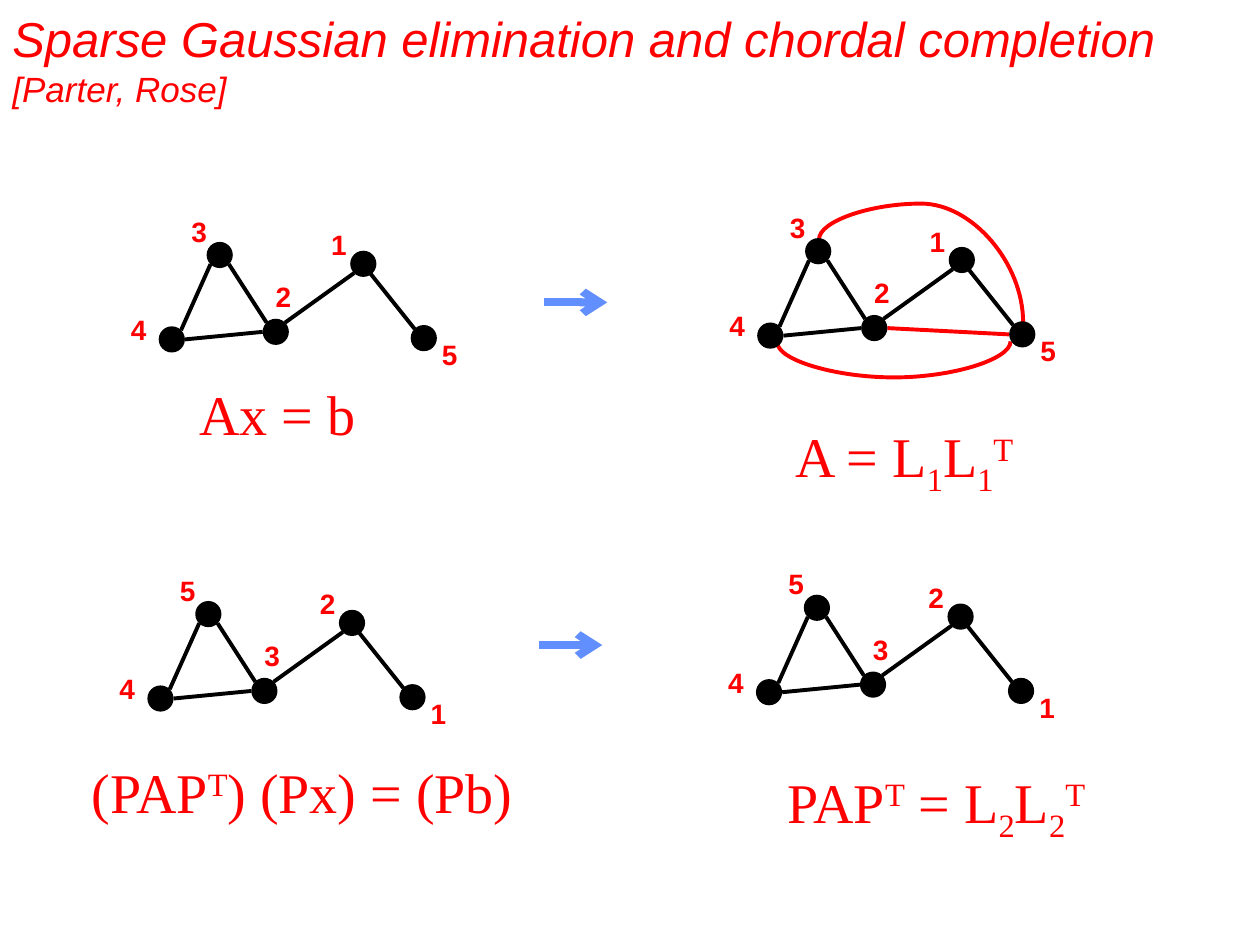
from lxml import etree
from pptx import Presentation
from pptx import util as u
from pptx.dml.color import RGBColor
from pptx.enum import shapes, text
from pptx.oxml.ns import qn

COLORS = {"red": "FF0000", "black": "000000", "blue": "618FFD"}
COLUMNS, ROWS = 100, 75
CELL = u.Inches(10) // COLUMNS
NODE = 2.08
SUB, SUP = {"base": -25}, {"base": 30}

NODES = {"left": (3.2, 9.4), "mid": (11.45, 8.8), "top": (7, 2.7),
         "peak": (18.4, 3.4), "right": (23.2, 9.3)}
LABELS = {"left": (0, 7.8), "mid": (11.5, 5.2), "top": (4.8, 0),
          "peak": (15.9, 1.1), "right": (24.7, 9.8)}
SITES = {"nw": (0.15, 0.15), "ne": (0.85, 0.15), "sw": (0.15, 0.85),
         "se": (0.85, 0.85), "w": (0, 0.5), "e": (1, 0.5), "inner": (0.57, 0.62)}
EDGES = [("peak", "inner", "right", "nw"), ("top", "se", "mid", "nw"),
         ("top", "sw", "left", "ne"), ("left", "e", "mid", "w"),
         ("mid", "ne", "peak", "sw")]
FILL_EDGE = ("mid", "e", "right", "w")


def cells(*values):
    return [round(v * CELL) for v in values]


def rgb(name):
    return RGBColor.from_string(COLORS[name])


def add_text(parent, box, parts, size=16, font="Arial", bold=False, italic=False,
             align=text.PP_ALIGN.LEFT, anchor=text.MSO_ANCHOR.TOP, wrap=False):
    sp = parent.add_textbox(*cells(*box))
    tf = sp.text_frame
    tf.word_wrap = wrap
    tf.vertical_anchor = anchor
    p = tf.paragraphs[0]
    p.alignment = align
    for content, changes in parts:
        if content == "\n":
            p.add_line_break()
            continue
        r = p.add_run()
        r.text = content
        r.font.name = font
        r.font.size = u.Pt(changes.get("size", size))
        r.font.bold, r.font.italic = bold, italic
        r.font.color.rgb = rgb("red")
        if "base" in changes:
            r._r.get_or_add_rPr().set("baseline", str(changes["base"] * 1000))


def add_formula(parent, box, parts):
    add_text(parent, box, parts, size=32, font="Times New Roman",
             align=text.PP_ALIGN.RIGHT)


def add_line(parent, start, end, color="black", width=2.25,
             kind=shapes.MSO_CONNECTOR.STRAIGHT):
    sp = parent.add_connector(kind, *cells(*start, *end))
    sp.line.color.rgb = rgb(color)
    sp.line.width = u.Pt(width)
    etree.SubElement(sp._element.spPr, qn("a:effectLst"))
    return sp


def add_arrow(parent, start, end):
    sp = add_line(parent, start, end, "blue", 4.5)
    etree.SubElement(sp.line._get_or_add_ln(), qn("a:tailEnd"), type="arrow")


def add_curve(parent, box, turn, bend, flip=False):
    x, y, w, h = box
    sp = add_line(parent, (x, y), (x + w, y + h), "red",
                  kind=shapes.MSO_CONNECTOR.CURVE)
    xfrm = sp._element.spPr.find(qn("a:xfrm"))
    xfrm.set("rot", str(turn * 60000))
    if flip:
        xfrm.set("flipV", "1")
    geom = sp._element.spPr.find(qn("a:prstGeom"))
    guides = geom.find(qn("a:avLst"))
    if guides is None:
        guides = etree.SubElement(geom, qn("a:avLst"))
    etree.SubElement(guides, qn("a:gd"), name="adj1", fmla=f"val {round(bend * 100000)}")


def add_node(parent, x, y):
    sp = parent.add_shape(shapes.MSO_SHAPE.OVAL, *cells(x, y, NODE, NODE))
    sp.shadow.inherit = False
    sp.fill.solid()
    sp.fill.fore_color.rgb = rgb("black")
    sp.line.fill.background()


def add_edge(parent, origin, edge, color="black"):
    def point(node, site):
        return [o + n + s * NODE for o, n, s in zip(origin, NODES[node], SITES[site])]

    start, start_site, end, end_site = edge
    add_line(parent, point(start, start_site), point(end, end_site), color)


def add_graph(parent, origin, numbers, filled=False):
    group = parent.add_group_shape().shapes
    left, top = origin
    if filled:
        add_curve(group, (69.8, 14.2, 6.6, 16.2), 270, 1.43, flip=True)
        add_curve(group, (70.9, 17.9, 0.1, 18.5), 90, 29)
        add_edge(group, origin, FILL_EDGE, "red")
    for x, y in NODES.values():
        add_node(group, left + x, top + y)
    for edge in EDGES:
        add_edge(group, origin, edge)
    for (x, y), number in zip(LABELS.values(), numbers):
        add_text(group, (left + x, top + y, 3.3, 3.7), [(number, {})], bold=True)


def main():
    prs = Presentation()
    prs.slide_width, prs.slide_height = COLUMNS * CELL, ROWS * CELL
    parent = prs.slides.add_slide(prs.slide_layouts[6]).shapes

    add_formula(parent, (5.7, 59.6, 36, 6.4),
                [("(PAP", {}), ("T", SUP), (") (Px) = (Pb)", {})])
    add_formula(parent, (14.7, 29.6, 14.5, 6.4), [("Ax = b", {})])
    add_formula(parent, (60.4, 60.4, 26.7, 6.4),
                [("PAP", {}), ("T", SUP), (" = L", {}), ("2", SUB),
                 ("L", {}), ("2", SUB), ("T", SUP)])
    add_formula(parent, (61.3, 33, 20.1, 6.4),
                [("A = L", {}), ("1", SUB), ("L", {}), ("1", SUB), ("T", SUP)])

    add_graph(parent, (9.4, 16.5), "42315")
    add_graph(parent, (56.9, 16.2), "42315", filled=True)
    add_graph(parent, (8.5, 45), "43521")
    add_graph(parent, (56.8, 44.5), "43521")

    add_text(parent, (0, 0, 97.5, 9.4),
             [("Sparse Gaussian elimination and chordal completion", {}),
              ("\n", {}), ("[Parter, Rose]", {"size": 20})],
             size=28, italic=True, anchor=text.MSO_ANCHOR.MIDDLE, wrap=True)
    for x, y in [(43.2, 24), (42.8, 51.2)]:
        add_arrow(parent, (x, y), (x + 5, y))
    prs.save("out.pptx")


if __name__ == "__main__":
    main()
